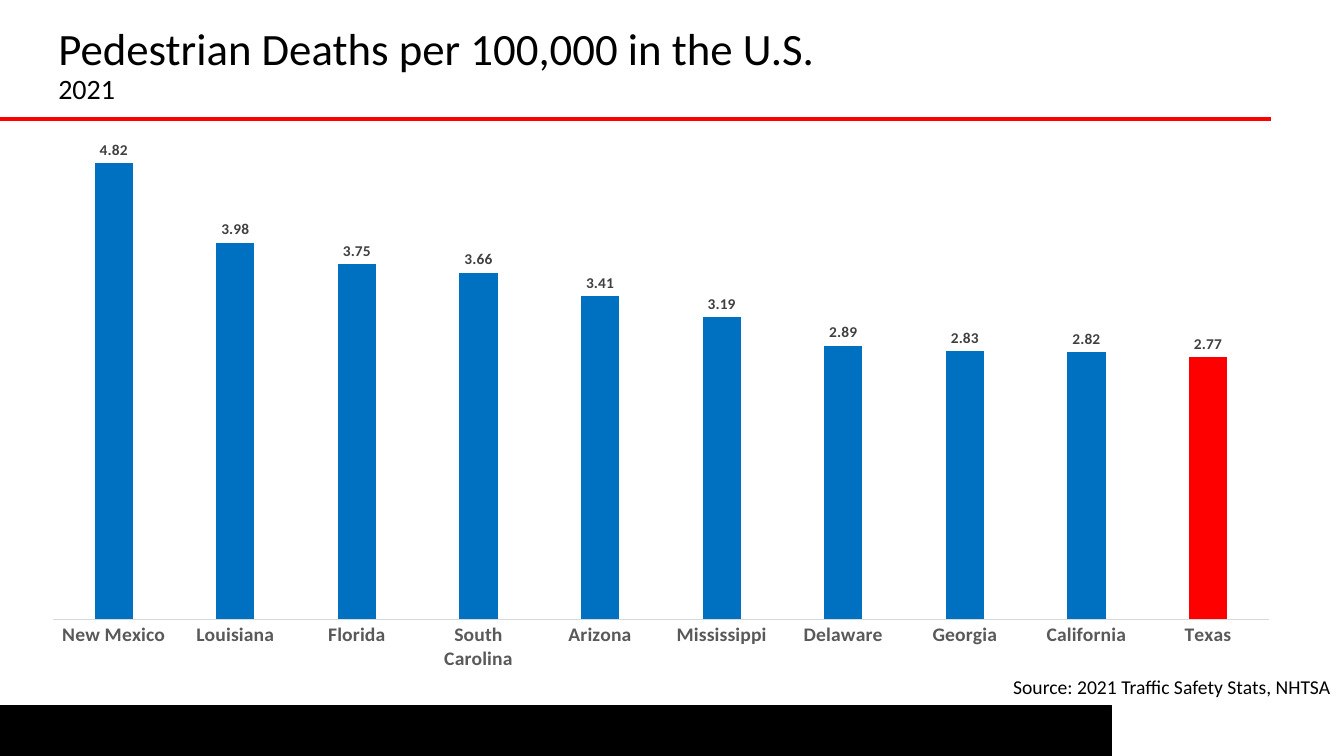
from lxml import etree
from pptx import Presentation
from pptx.chart.data import CategoryChartData
from pptx.dml.color import RGBColor
from pptx.enum.chart import XL_CHART_TYPE, XL_LABEL_POSITION, XL_TICK_MARK
from pptx.enum.shapes import MSO_CONNECTOR, MSO_SHAPE
from pptx.enum.text import MSO_ANCHOR
from pptx.oxml import parse_xml
from pptx.oxml.ns import qn
from pptx.util import Inches, Pt

COLUMNS = XL_CHART_TYPE.COLUMN_CLUSTERED
OUTSIDE = XL_LABEL_POSITION.OUTSIDE_END
NO_TICK = XL_TICK_MARK.NONE
STRAIGHT = MSO_CONNECTOR.STRAIGHT
RECTANGLE = MSO_SHAPE.RECTANGLE
MIDDLE, TOP = MSO_ANCHOR.MIDDLE, MSO_ANCHOR.TOP

# Content
TITLE = [("Pedestrian Deaths per 100,000 in the U.S.", 32), ("2021", 20)]
SOURCE = [("Source: 2021 Traffic Safety Stats, NHTSA", 14)]
DEATH_RATES = {
    "New Mexico": 4.82, "Louisiana": 3.98, "Florida": 3.75,
    "South Carolina": 3.66, "Arizona": 3.41, "Mississippi": 3.19,
    "Delaware": 2.89, "Georgia": 2.83, "California": 2.82, "Texas": 2.77,
}
HIGHLIGHT = "Texas"
BLACK, RED, BLUE = "000000", "FF0000", "0070C0"
FONT = "Calibri"

# Layout in inches
WIDTH, HEIGHT = 13.33, 7.5
RIGHT_EDGE = 12.61
RULE_Y = 1.18
CHART_LEFT, CHART_TOP, CHART_HEIGHT = 0.19, 0.51, 6.14
CHART_BOTTOM = CHART_TOP + CHART_HEIGHT
SOURCE_WIDTH = 3.38
PLOT_SHARES = {"x": 0.027, "y": 0, "w": 0.971, "h": 0.939}


def color(value):
    return RGBColor.from_string(value)


def set_font(font, size, value, bold=False, name=FONT):
    font.size, font.bold, font.name = Pt(size), bold, name
    font.color.rgb = color(value)


def fill(part, value):
    part.fill.solid()
    part.fill.fore_color.rgb = color(value)


def add_text(page, area, lines, anchor, wrap):
    box = page.shapes.add_textbox(*map(Inches, area))
    frame = box.text_frame
    frame.word_wrap, frame.vertical_anchor = wrap, anchor
    para = frame.paragraphs[0]
    if len(lines) > 1:
        para.line_spacing = 0.9
    for index, (text, size) in enumerate(lines):
        if index:
            para.add_line_break()
        span = para.add_run()
        span.text = text
        set_font(span.font, size, BLACK)


def add_rate_chart(page):
    data = CategoryChartData()
    data.categories = list(DEATH_RATES)
    data.add_series("Series 1", list(DEATH_RATES.values()))
    area = (CHART_LEFT, CHART_TOP, RIGHT_EDGE - CHART_LEFT, CHART_HEIGHT)
    chart = page.shapes.add_chart(COLUMNS, *map(Inches, area), data).chart
    chart.has_legend = chart.has_title = False
    set_font(chart.font, 10, BLACK, name="Arial")

    # Axes
    states, rates = chart.category_axis, chart.value_axis
    states.major_tick_mark = states.minor_tick_mark = NO_TICK
    set_font(states.tick_labels.font, 14, "595959", bold=True)
    states.format.line.color.rgb = color("D9D9D9")
    states.format.line.width = Pt(0.75)
    rates.has_major_gridlines = rates.visible = False
    rates.minimum_scale, rates.maximum_scale = 0, 6

    # Columns and their values
    plot = chart.plots[0]
    plot.gap_width, plot.overlap, plot.vary_by_categories = 219, -27, False
    series = plot.series[0]
    fill(series.format, BLUE)
    fill(series.points[list(DEATH_RATES).index(HIGHLIGHT)].format, RED)
    labels = series.data_labels
    labels.show_value, labels.position = True, OUTSIDE
    set_font(labels.font, 11, "404040", bold=True)

    # Fixed inner plot area
    plot_area = chart.plots[0]._element.getparent()
    for old in plot_area.findall(qn("c:layout")):
        plot_area.remove(old)
    settings = [("layoutTarget", "inner"), ("xMode", "edge"), ("yMode", "edge")]
    settings += PLOT_SHARES.items()
    layout = parse_xml(
        '<c:layout xmlns:c="http://schemas.openxmlformats.org/drawingml/2006/chart">'
        "<c:manualLayout/></c:layout>")
    for name, value in settings:
        etree.SubElement(layout[0], qn("c:" + name)).set("val", str(value))
    plot_area.insert(0, layout)


def main():
    deck = Presentation()
    deck.slide_width, deck.slide_height = Inches(WIDTH), Inches(HEIGHT)
    page = deck.slides.add_slide(deck.slide_layouts[6])

    # Red rule under the title
    rule = page.shapes.add_connector(
        STRAIGHT, 0, Inches(RULE_Y), Inches(RIGHT_EDGE), Inches(RULE_Y))
    rule.line.color.rgb, rule.line.width = color(RED), Pt(3)
    etree.SubElement(rule._element.spPr, qn("a:effectLst"))

    # Black footer bar
    bar = page.shapes.add_shape(RECTANGLE, *map(Inches, (-0.08, 7, 11.1, 0.54)))
    bar.shadow.inherit = False
    fill(bar, BLACK)
    bar.line.color.rgb, bar.line.width = color(BLACK), Pt(0.75)

    # Title, chart and source
    add_text(page, (0.48, 0.01, 11.89, 1.29), TITLE, MIDDLE, True)
    add_rate_chart(page)
    add_text(page, (WIDTH - SOURCE_WIDTH, CHART_BOTTOM, SOURCE_WIDTH, 0.34),
             SOURCE, TOP, False)
    deck.save("out.pptx")


if __name__ == "__main__":
    main()
